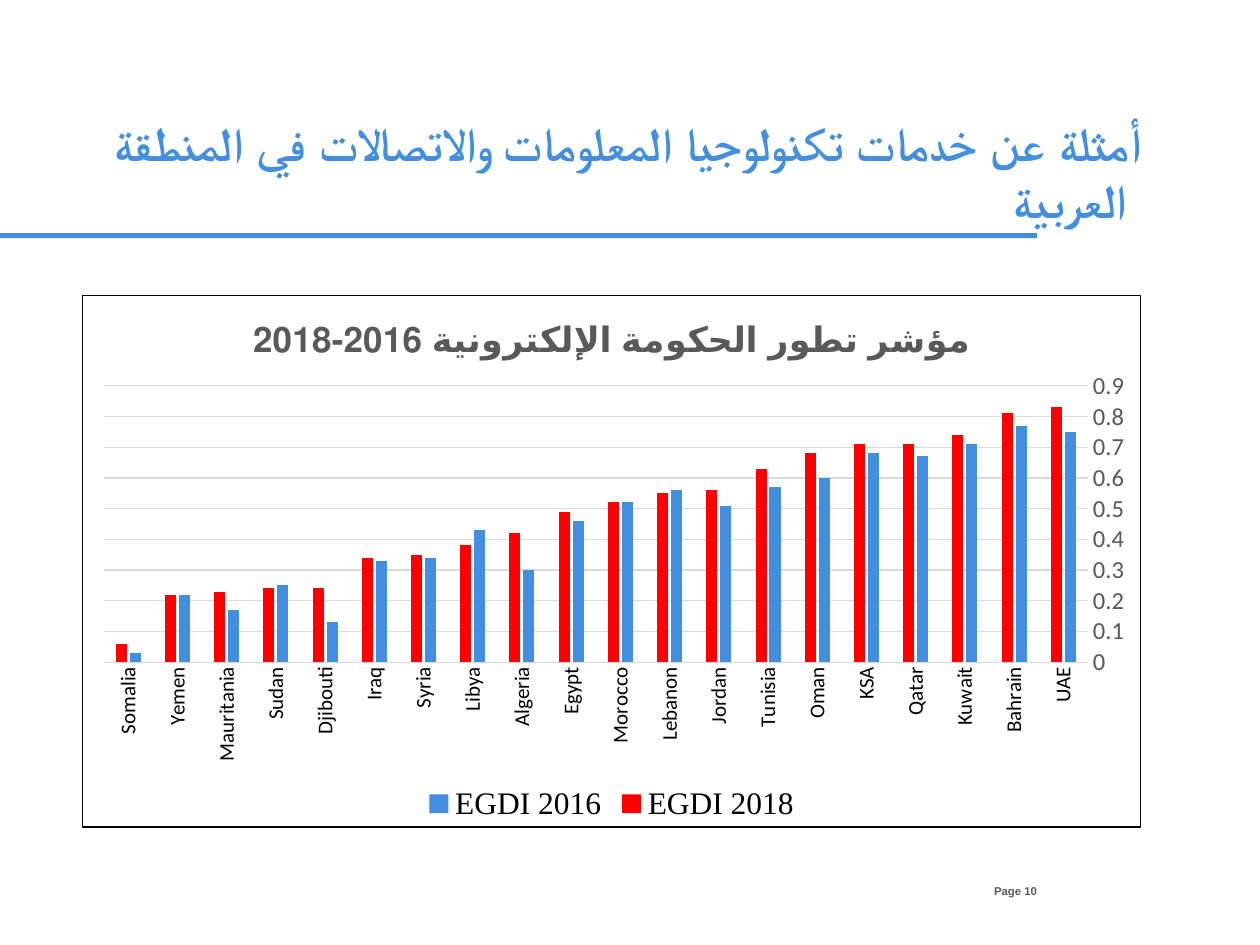
from dataclasses import dataclass

from pptx import Presentation
from pptx import oxml
from pptx.chart.data import CategoryChartData
from pptx.dml.color import RGBColor
from pptx.enum import chart as chart_enum, shapes, text
from pptx.oxml import ns
from pptx.util import Inches, Pt


@dataclass(frozen=True)
class Theme:
    blue: RGBColor = RGBColor(0x41, 0x8F, 0xDE)
    red: RGBColor = RGBColor(0xFF, 0x00, 0x00)
    black: RGBColor = RGBColor(0x00, 0x00, 0x00)
    gray: RGBColor = RGBColor(0x59, 0x59, 0x59)
    grid: RGBColor = RGBColor(0xD9, 0xD9, 0xD9)
    title_size: float = 27
    chart_title_size: float = 20
    legend_size: float = 18
    value_size: float = 14
    category_size: float = 12
    chart_size: float = 10
    page_size: float = 6.5
    line_width: float = 0.75


THEME = Theme()

# Country, EGDI 2016, EGDI 2018
EGDI = [
    ("UAE", 0.75, 0.83), ("Bahrain", 0.77, 0.81), ("Kuwait", 0.71, 0.74),
    ("Qatar", 0.67, 0.71), ("KSA", 0.68, 0.71), ("Oman", 0.6, 0.68),
    ("Tunisia", 0.57, 0.63), ("Jordan", 0.51, 0.56), ("Lebanon", 0.56, 0.55),
    ("Morocco", 0.52, 0.52), ("Egypt", 0.46, 0.49), ("Algeria", 0.3, 0.42),
    ("Libya", 0.43, 0.38), ("Syria", 0.34, 0.35), ("Iraq", 0.33, 0.34),
    ("Djibouti", 0.13, 0.24), ("Sudan", 0.25, 0.24), ("Mauritania", 0.17, 0.23),
    ("Yemen", 0.22, 0.22), ("Somalia", 0.03, 0.06),
]


def style_font(font, name, size, color, bold=False):
    font.name = name
    font.size = Pt(size)
    font.bold = bold
    font.color.rgb = color


def style_line(line, color):
    line.color.rgb = color
    line.width = Pt(THEME.line_width)


def fill_frame(frame, content, size, color):
    """Write one bold, right-aligned paragraph into a frame without margins."""
    frame.margin_left = frame.margin_right = 0
    frame.margin_top = frame.margin_bottom = 0
    frame.vertical_anchor = text.MSO_ANCHOR.TOP
    frame.word_wrap = True
    frame.auto_size = text.MSO_AUTO_SIZE.NONE
    paragraph = frame.paragraphs[0]
    paragraph.text = content
    paragraph.alignment = text.PP_ALIGN.RIGHT
    style_font(paragraph.font, "Arial", size, color, bold=True)
    return paragraph


def add_title(slide, content):
    title = slide.shapes.title
    title.left, title.top = Inches(0), Inches(0.91)
    title.width, title.height = Inches(9.05), Inches(0.45)
    paragraph = fill_frame(title.text_frame, content, THEME.title_size, THEME.blue)
    # Hanging indent
    properties = paragraph._p.get_or_add_pPr()
    properties.set("marL", str(Inches(0.38)))
    properties.set("indent", str(-Inches(0.38)))


def add_rule(slide):
    rule = slide.shapes.add_shape(
        shapes.MSO_SHAPE.RECTANGLE, Inches(0), Inches(1.85), Inches(8.23), Inches(0.04))
    rule.shadow.inherit = False
    rule.fill.solid()
    rule.fill.fore_color.rgb = THEME.blue
    rule.line.fill.background()


def add_page_label(slide, content):
    box = slide.shapes.add_textbox(Inches(7.54), Inches(7.02), Inches(0.69), Inches(0.11))
    fill_frame(box.text_frame, content, THEME.page_size, THEME.gray)


def add_border(chart):
    chart._chartSpace.chart.addnext(oxml.parse_xml(
        f'<c:spPr {ns.nsdecls("c", "a")}><a:ln w="{Pt(THEME.line_width)}"><a:solidFill>'
        f'<a:srgbClr val="{THEME.black}"/></a:solidFill></a:ln></c:spPr>'))


def place_plot(chart, x, y, w, h):
    """Fix the inner plot area, in fractions of the chart."""
    plot_area = chart._chartSpace.chart.plotArea
    for layout in plot_area.findall(ns.qn("c:layout")):
        plot_area.remove(layout)
    sizes = "".join(f'<c:{key} val="{value}"/>'
                    for key, value in (("x", x), ("y", y), ("w", w), ("h", h)))
    plot_area.insert(0, oxml.parse_xml(
        f'<c:layout {ns.nsdecls("c")}><c:manualLayout><c:layoutTarget val="inner"/>'
        f'<c:xMode val="edge"/><c:yMode val="edge"/>{sizes}</c:manualLayout></c:layout>'))


def format_axes(chart):
    categories, values = chart.category_axis, chart.value_axis
    for axis in (categories, values):
        axis.major_tick_mark = axis.minor_tick_mark = chart_enum.XL_TICK_MARK.NONE

    # Countries run from right to left, with upright labels
    categories.reverse_order = True
    style_line(categories.format.line, THEME.grid)
    style_font(categories.tick_labels.font, "Calibri", THEME.category_size, THEME.black)
    categories._element.xpath("c:txPr/a:bodyPr")[0].set("rot", "-5400000")

    values.minimum_scale, values.maximum_scale, values.major_unit = 0, 0.9, 0.1
    values.format.line.fill.background()
    values.has_major_gridlines = True
    style_line(values.major_gridlines.format.line, THEME.grid)
    style_font(values.tick_labels.font, "Calibri", THEME.value_size, THEME.gray)
    values.tick_labels.number_format = "General"
    values.tick_labels.number_format_is_linked = False


def add_chart(slide, title):
    countries, scores_2016, scores_2018 = zip(*EGDI)
    data = CategoryChartData()
    data.categories = countries
    data.add_series("EGDI 2016", scores_2016)
    data.add_series("EGDI 2018", scores_2018)
    chart = slide.shapes.add_chart(
        chart_enum.XL_CHART_TYPE.COLUMN_CLUSTERED,
        Inches(0.65), Inches(2.34), Inches(8.41), Inches(4.23), data).chart
    style_font(chart.font, "Calibri", THEME.chart_size, THEME.black)

    # Title
    chart.has_title = True
    paragraph = chart.chart_title.text_frame.paragraphs[0]
    paragraph.text = title
    style_font(paragraph.font, "Lato", THEME.chart_title_size, THEME.gray, bold=True)
    chart.chart_title.include_in_layout = False

    # Columns
    plot = chart.plots[0]
    plot.gap_width, plot.overlap = 219, -27
    plot.vary_by_categories = False
    for series, color in zip(plot.series, (THEME.blue, THEME.red)):
        series.format.fill.solid()
        series.format.fill.fore_color.rgb = color

    format_axes(chart)

    # Legend
    chart.has_legend = True
    chart.legend.position = chart_enum.XL_LEGEND_POSITION.BOTTOM
    chart.legend.include_in_layout = False
    style_font(chart.legend.font, "Times New Roman", THEME.legend_size, THEME.black)

    add_border(chart)
    place_plot(chart, 0.02, 0.17, 0.93, 0.52)


def main():
    presentation = Presentation()
    presentation.slide_width, presentation.slide_height = Inches(10), Inches(7.5)
    slide = presentation.slides.add_slide(presentation.slide_layouts[5])
    add_rule(slide)
    add_page_label(slide, "Page 10")
    add_chart(slide, "مؤشر تطور الحكومة الإلكترونية 2016-2018")
    add_title(slide, "أمثلة عن خدمات تكنولوجيا المعلومات والاتصالات في المنطقة العربية ")
    presentation.save("out.pptx")


if __name__ == "__main__":
    main()
